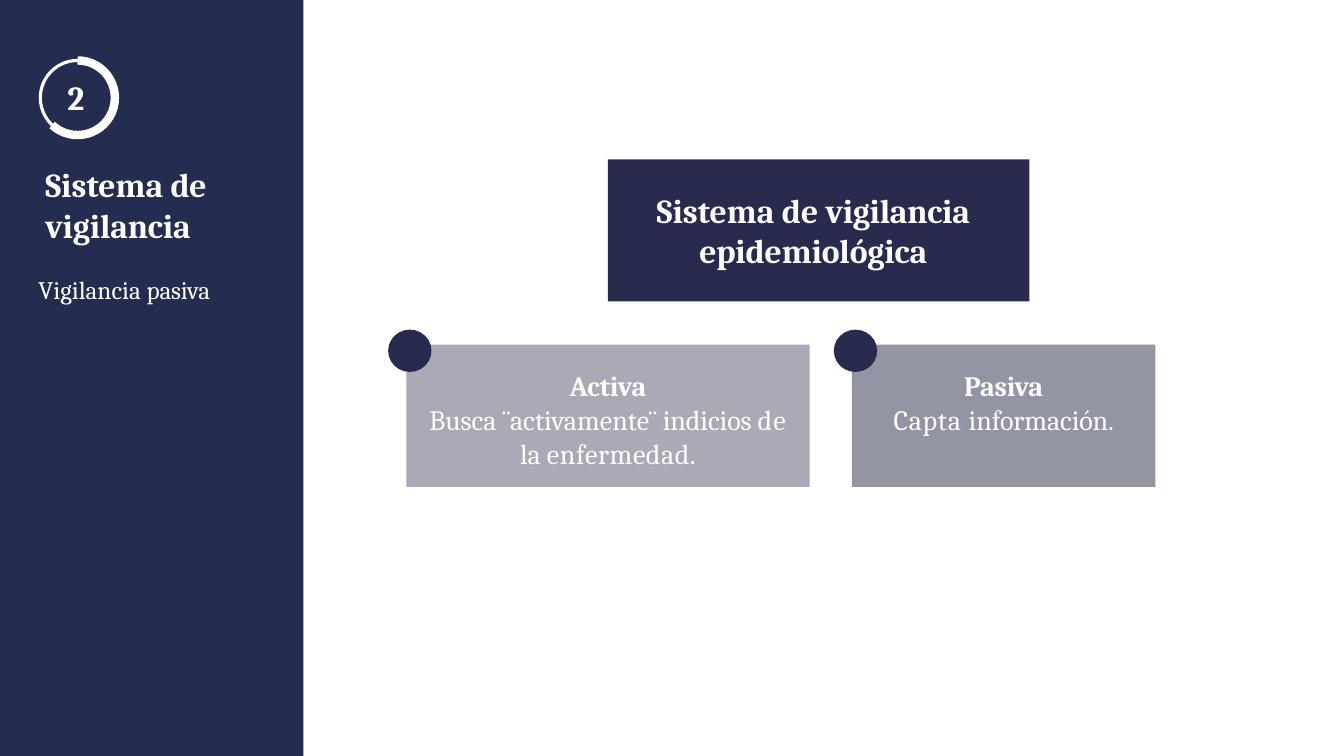
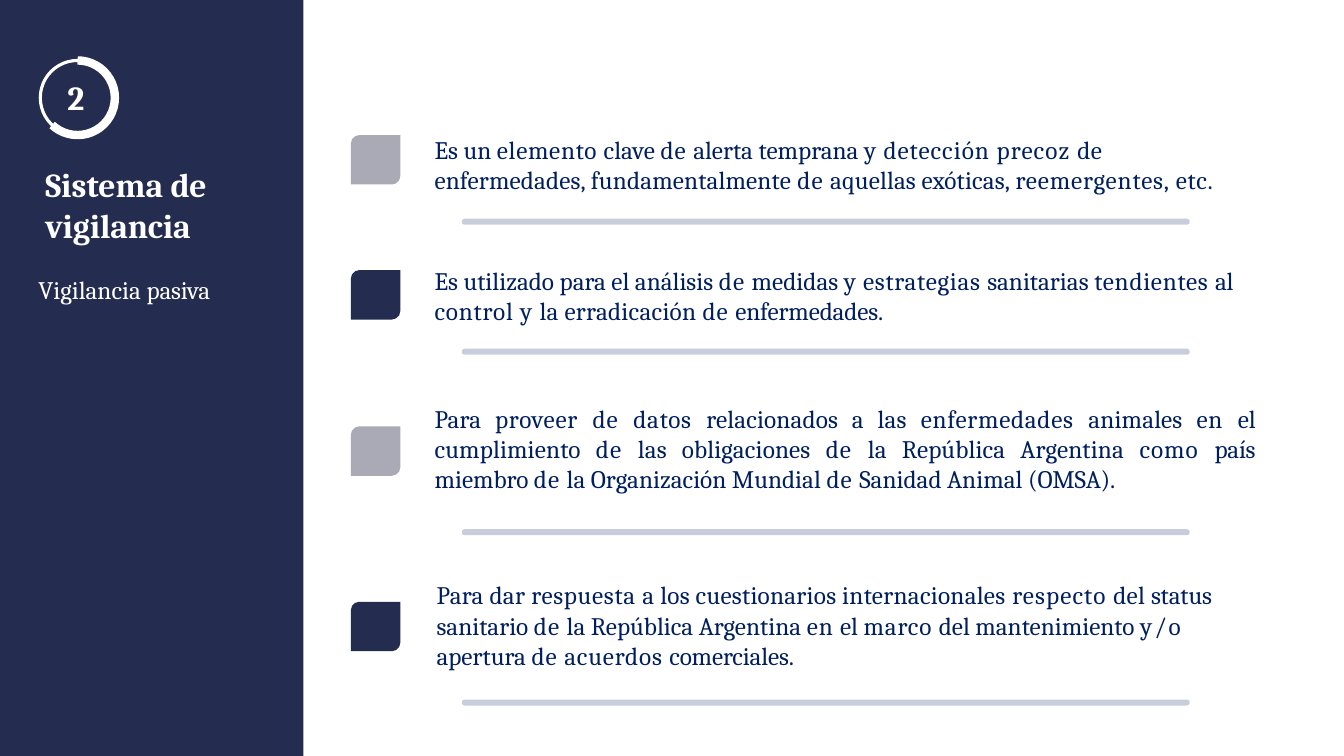
from lxml.etree import SubElement
from pptx import Presentation
from pptx.dml.color import RGBColor
from pptx.enum.shapes import MSO_SHAPE as Shape
from pptx.enum.text import MSO_ANCHOR as Anchor, MSO_AUTO_SIZE as AutoSize, PP_ALIGN as Align
from pptx.oxml.ns import qn
from pptx.util import Inches, Pt

COLORS = {
    "sidebar": "242C4F",
    "navy": "282A4E",
    "gray": "A9AAB6",
    "slate": "9394A4",
    "text": "001F5F",
    "white": "FFFFFF",
}
FONT = "Cambria"
TITLE_ONLY = 5
SIDEBAR_WIDTH = 3.01

# Each text is a list of paragraphs; each paragraph is a list of
# (words, letter spacing in points).
SECTION_NUMBER = [[("2", -0.8)]]
SECTION_TITLE = [[("Sistema ", 0), ("de ", -0.2), ("vigilancia", -0.1)]]
SECTION_TOPIC = [[("Vigilancia ", 0), ("pasiva", -0.1)]]
SYSTEM = [[("Sistema de ", 0), ("vigilancia ", -0.2), ("epidemiológica", -0.1)]]
ACTIVE = [
    [("Activa", -0.1)],
    [("Busca ¨activamente¨ ", 0), ("indicios ", -0.1), ("de ", 0.8),
     ("la ", 0), ("enfermedad.", 0.4)],
]
PASSIVE = [
    [("Pasiva", -0.1)],
    [("Capta ", 0.5), ("información.", -0.1)],
]
ALERT = [[
    ("Es un ", 0), ("elemento ", 0.5), ("clave ", 0), ("de ", 0.7),
    ("alerta temprana ", 0), ("y ", 0.6), ("detección ", 0.7),
    ("precoz ", 0.8), ("de ", 0.4), ("enfermedades, fundamentalmente ", 0.1),
    ("de ", 0.7), ("aquellas exóticas, ", 0.1), ("reemergentes, ", 0.6),
    ("etc.", 0.5),
]]
ANALYSIS = [[
    ("Es utilizado para el análisis ", 0), ("de ", 0.7), ("medidas ", 0),
    ("y ", 0.6), ("estrategias ", 0.5), ("sanitarias ", 0),
    ("tendientes ", 0.5), ("al ", -0.2), ("control y ", 0.6),
    ("la erradicación ", 0.2), ("de ", 0.7), ("enfermedades.", -0.1),
]]
REPORTING = [[
    ("Para ", 0.1), ("proveer ", 0.5), ("de ", 0.7), ("datos ", 0.5),
    ("relacionados a las ", 0.1), ("enfermedades ", 0.5), ("animales ", 0.1),
    ("en ", 0.6), ("el ", -0.2), ("cumplimiento ", 0.1), ("de ", 0.7),
    ("las obligaciones ", 0.1), ("de ", 0.7), ("la República Argentina ", 0.1),
    ("como ", 0.7), ("país ", -0.2), ("miembro ", 0), ("de ", 0.7),
    ("la Organización Mundial ", 0), ("de ", 0.7), ("Sanidad Animal ", 0),
    ("(OMSA).", -0.1),
]]
QUESTIONNAIRES = [[
    ("Para dar ", 0.2), ("respuesta ", 0.5),
    ("a los cuestionarios internacionales ", 0.2), ("respecto ", 0.8),
    ("del ", 0.2), ("status ", -0.1), ("sanitario ", 0), ("de ", 0.7),
    ("la República Argentina ", 0), ("en ", 0.6), ("el ", 0), ("marco ", 0.6),
    ("del mantenimiento ", 0), ("y/o ", 1.4), ("apertura ", 0), ("de ", 0.7),
    ("acuerdos ", 0.6), ("comerciales.", -0.1),
]]


def color(name):
    return RGBColor.from_string(COLORS[name])


def apply(target, values):
    """Set every attribute named in values on target."""
    for name, value in values.items():
        setattr(target, name, value)


class Deck:
    """Holds the presentation, its style and the current page."""

    def __init__(self):
        self.file = Presentation()
        apply(self.file, {"slide_width": Inches(13.33), "slide_height": Inches(7.5)})
        self.page = None

    def new_page(self):
        """Start a page with the section sidebar."""
        self.page = self.file.slides.add_slide(self.file.slide_layouts[TITLE_ONLY])
        band = self.shape(Shape.RECTANGLE, (0, 0, SIDEBAR_WIDTH, 7.5), "sidebar")
        self.page.shapes.element.insert(2, band.element)  # behind the title
        self.progress_ring()
        self.textbox((0.66, 0.75, 0.3, 0.43), SECTION_NUMBER, 24, bold=True)
        self.title()
        self.textbox((0.37, 2.71, 2.2, 0.33), SECTION_TOPIC, 18)

    def title(self):
        title = self.page.shapes.title
        places = [Inches(value) for value in (0.44, 1.62, 1.75, 0.83)]
        apply(title, dict(zip(("left", "top", "width", "height"), places)))
        self.set_text(title, SECTION_TITLE, 24, bold=True)

    def progress_ring(self):
        box = (0.4, 0.6, 0.74, 0.74)
        self.outline(Shape.OVAL, box, 2.25)
        arc = self.outline(Shape.ARC, box, 6)
        for index, degrees in enumerate((270, 133)):
            arc.adjustments[index] = degrees * 0.6

    def outline(self, kind, box, width):
        shape = self.shape(kind, box)
        shape.line.color.rgb = color("white")
        shape.line.width = Pt(width)
        return shape

    def shape(self, kind, box, fill=None, opacity=None):
        shape = self.page.shapes.add_shape(kind, *map(Inches, box))
        shape.shadow.inherit = False
        shape.line.fill.background()
        if fill is None:
            shape.fill.background()
            return shape
        shape.fill.solid()
        shape.fill.fore_color.rgb = color(fill)
        if opacity is not None:
            tint = shape.element.spPr.find(f"{qn('a:solidFill')}/{qn('a:srgbClr')}")
            SubElement(tint, qn("a:alpha"), val=str(opacity * 1000))
        return shape

    def textbox(self, box, text, size, **style):
        self.set_text(self.page.shapes.add_textbox(*map(Inches, box)), text, size, **style)

    def set_text(self, shape, text, size, ink="white", bold=False, heading=False,
                 align=Align.LEFT, anchor=Anchor.TOP, margins=(0.01, 0.01, 0, 0)):
        """Fill a shape with text; heading makes only the first paragraph bold."""
        frame = shape.text_frame
        left, top, right, bottom = map(Inches, margins)
        apply(frame, {
            "word_wrap": True, "auto_size": AutoSize.NONE, "vertical_anchor": anchor,
            "margin_left": left, "margin_top": top,
            "margin_right": right, "margin_bottom": bottom,
        })
        for index, spans in enumerate(text):
            para = frame.add_paragraph() if index else frame.paragraphs[0]
            para.alignment = align
            for words, spacing in spans:
                span = para.add_run()
                span.text = words
                apply(span.font, {
                    "name": FONT, "size": Pt(size),
                    "bold": bold or (heading and index == 0),
                })
                span.font.color.rgb = color(ink)
                if spacing:
                    span._r.get_or_add_rPr().set("spc", str(round(spacing * 100)))

    def card(self, left, width, text, fill):
        """Add a type of surveillance with a dot on its corner."""
        card = self.shape(Shape.RECTANGLE, (left, 3.42, width, 1.41), fill)
        self.set_text(card, text, 20, heading=True, align=Align.CENTER,
                      margins=(0.12, 0.24, 0.12, 0))
        self.shape(Shape.OVAL, (left - 0.18, 3.27, 0.43, 0.42), "navy")

    def purpose(self, tile_top, text_box, text, rule_top, fill, align):
        """Add a marker tile, its text and the rule below it."""
        tile = self.shape(Shape.ROUND_2_DIAG_RECTANGLE, (3.48, tile_top, 0.49, 0.49), fill)
        tile.adjustments[0] = 0.17
        self.textbox(text_box, text, 18, ink="text", align=align)
        rule = self.shape(Shape.ROUNDED_RECTANGLE, (4.58, rule_top, 7.22, 0.06),
                          "text", opacity=22)
        rule.adjustments[0] = 0.5


def system_page(deck):
    deck.new_page()
    system = deck.shape(Shape.RECTANGLE, (6.03, 1.58, 4.18, 1.41), "navy")
    deck.set_text(system, SYSTEM, 24, bold=True, align=Align.CENTER,
                  anchor=Anchor.MIDDLE, margins=(0, 0, 0.11, 0))
    deck.card(4.03, 4, ACTIVE, "gray")
    deck.card(8.45, 3.01, PASSIVE, "slate")


def purposes_page(deck):
    deck.new_page()
    purposes = [
        (1.34, (4.3, 1.32, 8.15, 0.63), ALERT, 2.17, "gray", Align.LEFT),
        (2.68, (4.3, 2.62, 8.15, 0.63), ANALYSIS, 3.46, "sidebar", Align.LEFT),
        (4.23, (4.3, 3.99, 8.15, 0.93), REPORTING, 5.25, "gray", Align.JUSTIFY),
        (5.97, (4.32, 5.74, 8.15, 0.93), QUESTIONNAIRES, 6.94, "sidebar", Align.LEFT),
    ]
    for purpose in purposes:
        deck.purpose(*purpose)


def main():
    deck = Deck()
    system_page(deck)
    purposes_page(deck)
    deck.file.save("out.pptx")


if __name__ == "__main__":
    main()
